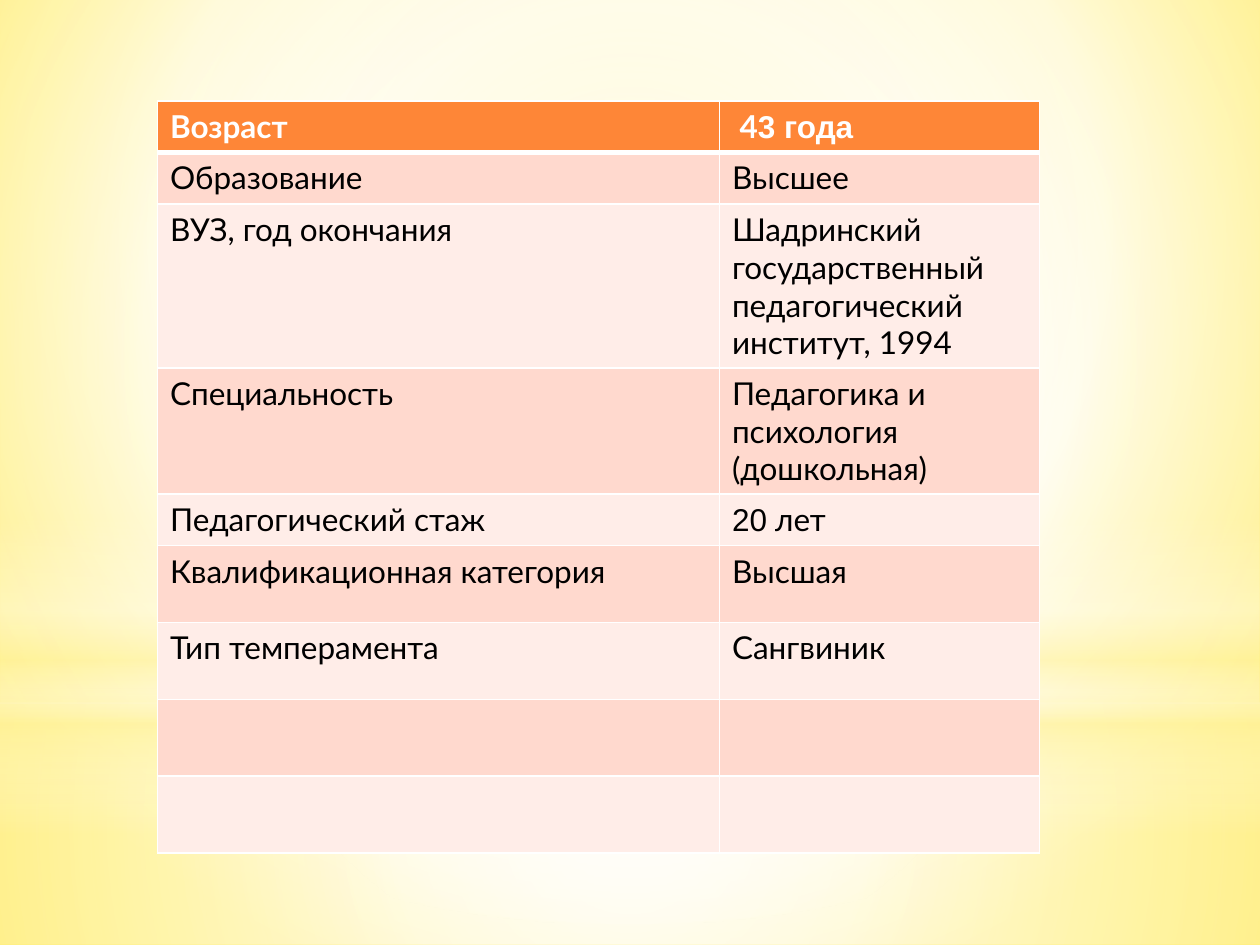
"""Build a teacher profile slide: a two-column table on a soft yellow glow."""
from lxml import etree
from pptx import Presentation, util as u
from pptx.dml.color import RGBColor
from pptx.enum import shapes
from pptx.oxml import ns

WHITE = RGBColor(0xFF, 0xFF, 0xFF)
BLACK = RGBColor(0x00, 0x00, 0x00)
YELLOW = RGBColor(0xFF, 0xF3, 0x9D)
LEMON = RGBColor(0xFF, 0xF1, 0x8D)
GOLD = RGBColor(0xFF, 0xE9, 0x4E)
ORANGE = RGBColor(0xFE, 0x86, 0x37)
PINK = RGBColor(0xFF, 0xD9, 0xCE)
PALE_PINK = RGBColor(0xFF, 0xED, 0xE8)
CENTRE = (50, 50, 50, 50)


def add(parent, tag, **attributes):
    child = etree.SubElement(parent, ns.qn(tag))
    for key, value in attributes.items():
        child.set(key, str(value))
    return child


def paint_gradient(owner, fill, stops, focus=None):
    fill.gradient()
    gradient = owner.find(".//" + ns.qn("a:gradFill"))
    gradient.clear()
    gradient.set("rotWithShape", "1")
    stop_list = add(gradient, "a:gsLst")
    for position, colour, opacity in stops:
        stop = add(stop_list, "a:gs", pos=position * 1000)
        tint = add(stop, "a:srgbClr", val=colour)
        add(tint, "a:alpha", val=opacity * 1000)
    if focus:
        circle = add(gradient, "a:path", path="circle")
        add(circle, "a:fillToRect", **{side: share * 1000 for side, share in zip("ltrb", focus)})
    else:
        add(gradient, "a:lin", ang=90 * 60000, scaled=0)


deck = Presentation()
deck.slide_width, deck.slide_height = u.Inches(10), u.Inches(7.5)
slide = deck.slides.add_slide(deck.slide_layouts[6])
paint_gradient(slide.element, slide.background.fill,
               [(0, LEMON, 100), (60, WHITE, 100), (100, GOLD, 100)], (20, 10, 20, 60))

RECTANGLE, OVAL = shapes.MSO_SHAPE.RECTANGLE, shapes.MSO_SHAPE.OVAL
glows = [
    (RECTANGLE, 5.58, 1.92, [(0, WHITE, 91), (37, WHITE, 76), (100, YELLOW, 79)], CENTRE),
    (RECTANGLE, 0, 5.58, [(0, WHITE, 89), (48, WHITE, 62), (100, YELLOW, 79)], CENTRE),
    (RECTANGLE, 4.12, 2.5, [(0, WHITE, 0), (29, WHITE, 30), (45, YELLOW, 40),
                            (55, WHITE, 26), (65, YELLOW, 60), (100, WHITE, 0)], None),
    (OVAL, 1.75, 5.58, [(0, WHITE, 100), (56, WHITE, 0)], CENTRE),
]
for outline, top, height, stops, focus in glows:
    glow = slide.shapes.add_shape(outline, 0, u.Inches(top), deck.slide_width, u.Inches(height))
    glow.shadow.inherit = False
    glow.line.fill.background()
    paint_gradient(glow.element, glow.fill, stops, focus)

ARIAL_MARK = "|"
profile = [
    ("Возраст", " 4|3 года"),
    ("Образование", "Высшее"),
    ("ВУЗ, год окончания", "Шадринский государственный педагогический институт, 1994"),
    ("Специальность", "Педагогика и психология (дошкольная)"),
    ("Педагогический стаж", "|20| лет"),
    ("Квалификационная категория", "Высшая"),
    ("Тип темперамента", "Сангвиник"),
    ("", ""),
    ("", ""),
]
row_heights = [0.41] * 5 + [0.61] * 4
table = slide.shapes.add_table(len(profile), 2, u.Inches(1.25), u.Inches(0.8),
                               u.Inches(7), u.Inches(sum(row_heights))).table
for column, width in zip(table.columns, (4.46, 2.54)):
    column.width = u.Inches(width)

for row, (facts, height) in enumerate(zip(profile, row_heights)):
    table.rows[row].height = u.Inches(height)
    header = row == 0
    for col, fact in enumerate(facts):
        cell = table.cell(row, col)
        properties = cell._tc.get_or_add_tcPr()
        for side in "LRTB":
            thick = (row, side) in ((0, "B"), (1, "T"))
            border = add(properties, "a:ln" + side, w=u.Pt(3 if thick else 1))
            add(add(border, "a:solidFill"), "a:srgbClr", val=WHITE)
        cell.fill.solid()
        cell.fill.fore_color.rgb = ORANGE if header else PINK if row % 2 else PALE_PINK
        paragraph = cell.text_frame.paragraphs[0]
        paragraph.font.size = u.Pt(18)
        for index, part in enumerate(fact.split(ARIAL_MARK)):
            if part:
                run = paragraph.add_run()
                run.text = part
                run.font.name = "Arial" if index % 2 else "Lato"
                run.font.size = u.Pt(18)
                run.font.bold = header
                run.font.color.rgb = WHITE if header else BLACK

deck.save("out.pptx")
